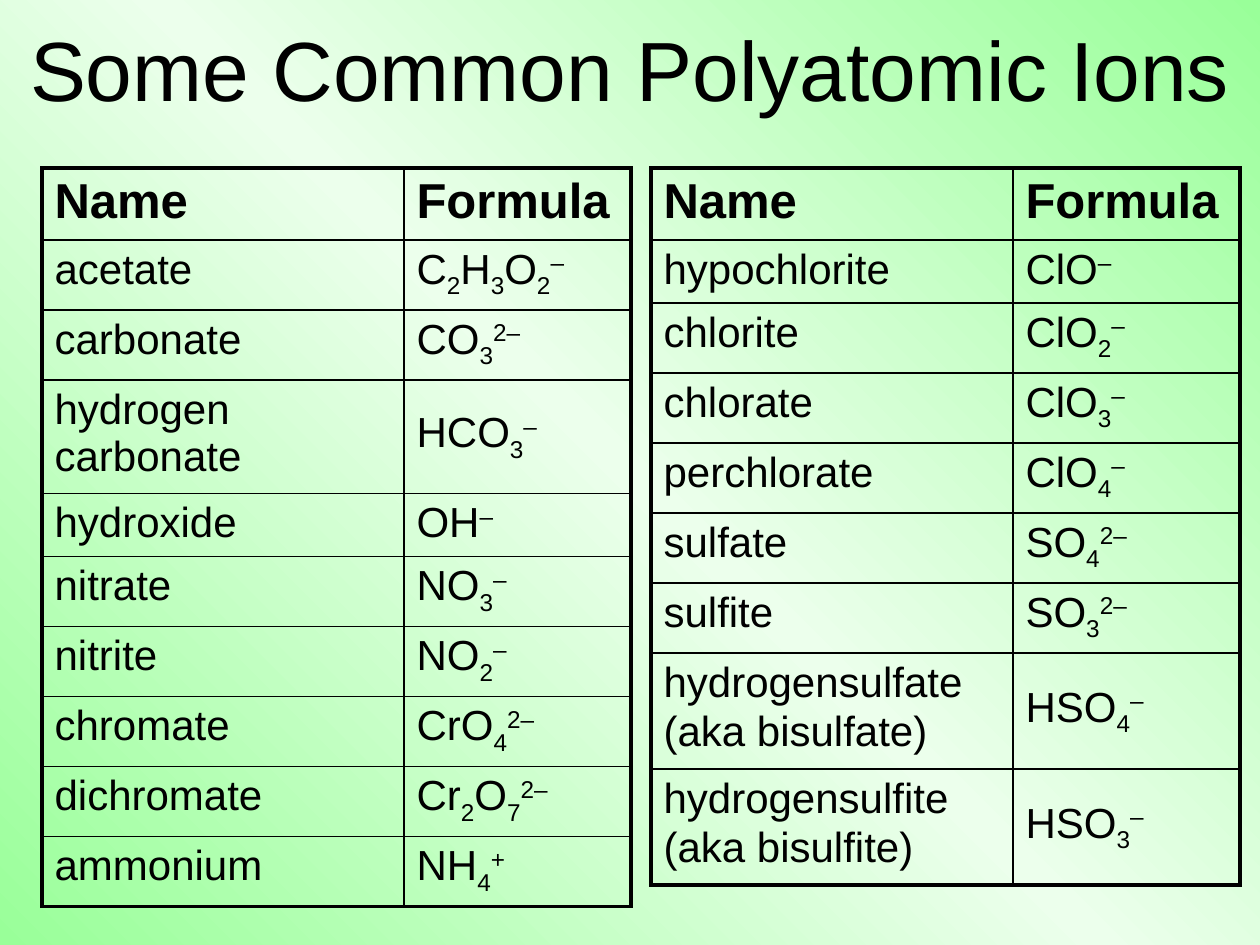
import copy
import itertools

import pptx
import pptx.dml.color
import pptx.enum.text
import pptx.oxml.ns
import pptx.util
from lxml import etree

PX = 914400 // 126
BLACK = pptx.dml.color.RGBColor(0, 0, 0)
GREEN = pptx.dml.color.RGBColor(0x99, 0xFF, 0x99)
PALE = pptx.dml.color.RGBColor(0xEC, 0xFF, 0xEC)

TABLE_TOP = 168
COLUMN_WIDTHS = (362, 227)
HEADER_HEIGHT, ROW_HEIGHT = 72, 63
THIN, THICK = 1, 2.25

# Each table: left edge, height of its two-line rows, ions.
# Digits in a formula are subscripts; the charge follows the caret.
TABLES = [
    (42, 113, [
        ("acetate", "C2H3O2^–"),
        ("carbonate", "CO3^2–"),
        ("hydrogen carbonate", "HCO3^–"),
        ("hydroxide", "OH^–"),
        ("nitrate", "NO3^–"),
        ("nitrite", "NO2^–"),
        ("chromate", "CrO4^2–"),
        ("dichromate", "Cr2O7^2–"),
        ("ammonium", "NH4^+"),
    ]),
    (651, 116, [
        ("hypochlorite", "ClO^–"),
        ("chlorite", "ClO2^–"),
        ("chlorate", "ClO3^–"),
        ("perchlorate", "ClO4^–"),
        ("sulfate", "SO4^2–"),
        ("sulfite", "SO3^2–"),
        ("hydrogensulfate\n(aka bisulfate)", "HSO4^–"),
        ("hydrogensulfite\n(aka bisulfite)", "HSO3^–"),
    ]),
]


def add_span(para, text, size, bold=False, baseline=0):
    """Append a run; baseline is its raise in percent."""
    span = para.add_run()
    span.text = text
    span.font.name = "Arial"
    span.font.size = pptx.util.Pt(size)
    span.font.bold = bold
    span.font.color.rgb = BLACK
    if baseline:
        span.font._element.set("baseline", str(baseline * 1000))


def add_child(parent, tag, **attributes):
    return etree.SubElement(parent, pptx.oxml.ns.qn(tag), attributes)


deck = pptx.Presentation()
deck.slide_width = 1260 * PX
deck.slide_height = 945 * PX
page = deck.slides.add_slide(deck.slide_layouts[6])

# Background: green, pale, green from bottom left to top right
fill = page.background.fill
fill.gradient()
fill.gradient_angle = 45
stop_list = fill.gradient_stops[0]._gs.getparent()
stop_list.append(copy.deepcopy(stop_list[-1]))
for stop, color, position in zip(fill.gradient_stops, (GREEN, PALE, GREEN), (0, 0.5, 1)):
    stop.color.rgb = color
    stop.position = position

# Title
box = page.shapes.add_textbox(0, 0, 1260 * PX, 136 * PX)
box.text_frame.word_wrap = True
box.text_frame.vertical_anchor = pptx.enum.text.MSO_ANCHOR.MIDDLE
para = box.text_frame.paragraphs[0]
para.alignment = pptx.enum.text.PP_ALIGN.CENTER
add_span(para, "Some Common Polyatomic Ions", 48)

# Ion tables
for left, tall_height, ions in TABLES:
    rows = [("Name", "Formula")] + ions
    tall = [" " in name for name, formula in rows]
    heights = [tall_height if is_tall else ROW_HEIGHT for is_tall in tall]
    heights[0] = HEADER_HEIGHT
    frame = page.shapes.add_table(
        len(rows), 2, left * PX, TABLE_TOP * PX, sum(COLUMN_WIDTHS) * PX, sum(heights) * PX)
    table = frame.table
    table.first_row = False
    table.horz_banding = False
    for column, width in zip(table.columns, COLUMN_WIDTHS):
        column.width = width * PX

    for row, texts in enumerate(rows):
        table.rows[row].height = heights[row] * PX
        for col, text in enumerate(texts):
            cell = table.cell(row, col)

            # Thick outside edges, thin inside lines
            outer = {"a:lnL": col == 0, "a:lnR": col == 1,
                     "a:lnT": row == 0, "a:lnB": row == len(rows) - 1}
            properties = cell._tc.get_or_add_tcPr()
            for tag, is_outer in outer.items():
                width = pptx.util.Pt(THICK if is_outer else THIN)
                line = add_child(properties, tag, w=str(width))
                add_child(add_child(line, "a:solidFill"), "a:srgbClr", val=str(BLACK))
            cell.fill.background()
            if col == 1 and tall[row]:
                cell.vertical_anchor = pptx.enum.text.MSO_ANCHOR.MIDDLE

            cell.text_frame.text = text
            for para in cell.text_frame.paragraphs:
                spacing = add_child(para._p.get_or_add_pPr(), "a:spcBef")
                percent = 5 if "\n" in text else 20
                add_child(spacing, "a:spcPct", val=str(percent * 1000))
                content = para.text
                for span in para.runs:
                    para._p.remove(span._r)
                if row == 0 or col == 0:
                    add_span(para, content, 28 if row == 0 else 24, bold=row == 0)
                    continue
                body, charge = content.split("^")
                for is_digit, letters in itertools.groupby(body, str.isdigit):
                    add_span(para, "".join(letters), 24, baseline=-25 if is_digit else 0)
                add_span(para, charge, 24, baseline=30)

deck.save("out.pptx")
